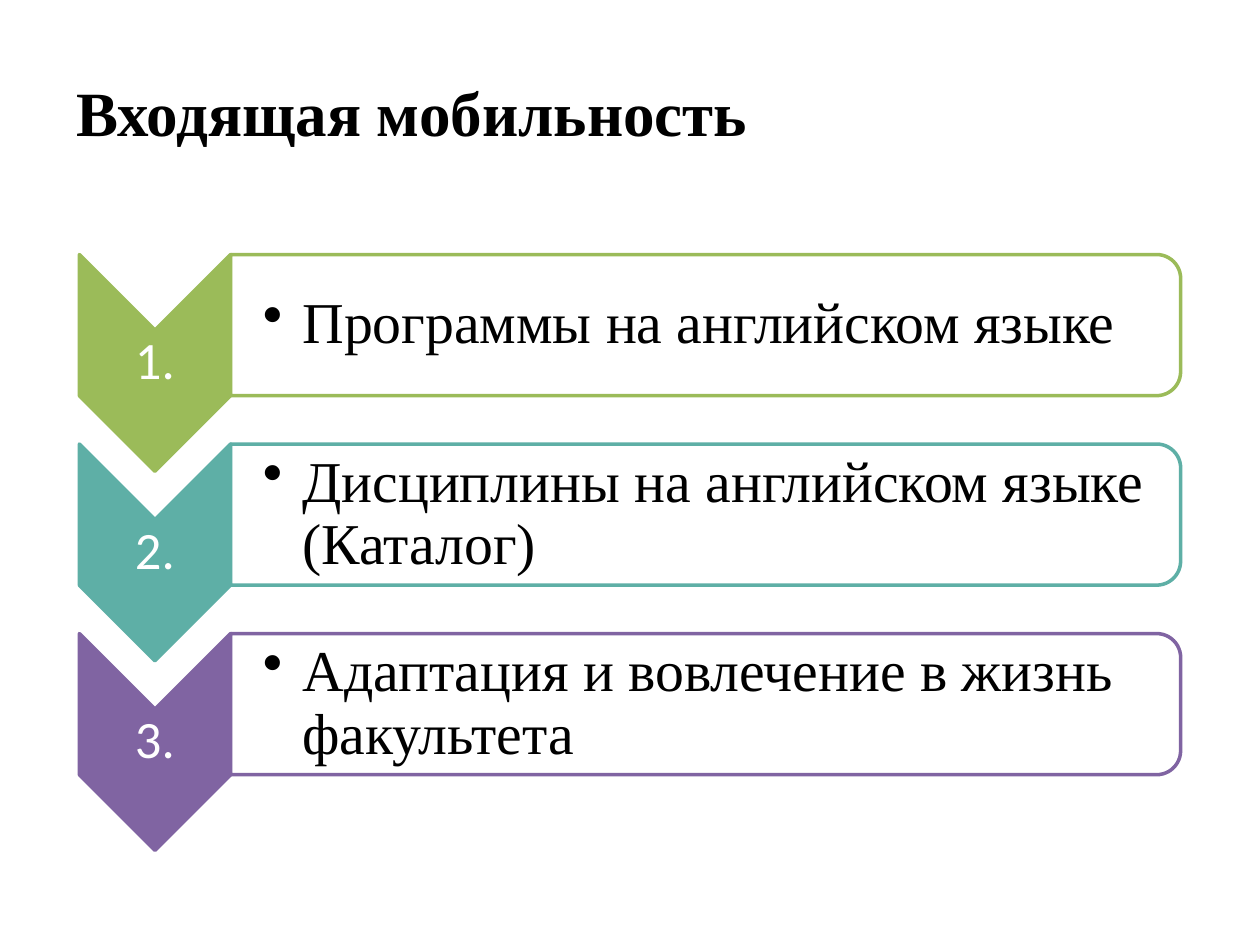
from dataclasses import dataclass

from lxml.etree import SubElement
from pptx import Presentation
from pptx.dml.color import RGBColor
from pptx.enum.shapes import MSO_SHAPE as Preset
from pptx.enum.text import MSO_ANCHOR as Anchor, PP_ALIGN as Align
from pptx.oxml.ns import qn
from pptx.util import Pt

SERIF = "Times New Roman"
SANS = "Calibri"
BLACK = "000000"
WHITE = "FFFFFF"

STEP_TOP = 145.44
STEP_PITCH = 108.3
CHEVRON_LEFT, CHEVRON_WIDTH, CHEVRON_HEIGHT = 45.36, 86.4, 123.84
PANEL_LEFT = CHEVRON_LEFT + CHEVRON_WIDTH
PANEL_WIDTH, PANEL_HEIGHT = 542.88, 80.64
TIP_DEPTH = CHEVRON_WIDTH / 2
CORNER_INSET = 3.94


@dataclass(frozen=True)
class Box:
    left: float
    top: float
    width: float
    height: float

    def lengths(self) -> tuple:
        return Pt(self.left), Pt(self.top), Pt(self.width), Pt(self.height)

    def before_quarter_turn(self) -> "Box":
        """Frame that covers this box once it is rotated by 90 degrees."""
        shift = (self.width - self.height) / 2
        return Box(self.left + shift, self.top - shift, self.height, self.width)


@dataclass(frozen=True)
class Step:
    number: str
    topic: str
    color: str


STEPS = [
    Step("1.", "Программы на английском языке", "9BBB59"),
    Step("2.", "Дисциплины на английском языке (Каталог)", "5EAFA6"),
    Step("3.", "Адаптация и вовлечение в жизнь факультета", "8064A2"),
]


def rgb(value: str) -> RGBColor:
    return RGBColor.from_string(value)


def add_bullet(paragraph, indent: float) -> None:
    properties = paragraph._p.get_or_add_pPr()
    properties.set("marL", str(Pt(indent)))
    properties.set("indent", str(-Pt(indent)))
    SubElement(properties, qn("a:buChar")).set("char", "•")


def add_text(slide, text: str, box: Box, *, size: float, font: str, color: str,
             bold: bool = False, align=Align.LEFT, spacing: float = 1.0,
             insets: tuple = (7.2, 3.6, 7.2, 3.6), bullet_indent: float = 0) -> None:
    frame = slide.shapes.add_textbox(*box.lengths()).text_frame
    frame.word_wrap = True
    frame.vertical_anchor = Anchor.MIDDLE
    (frame.margin_left, frame.margin_top,
     frame.margin_right, frame.margin_bottom) = map(Pt, insets)
    paragraph = frame.paragraphs[0]
    paragraph.alignment = align
    paragraph.line_spacing = spacing
    if bullet_indent:
        add_bullet(paragraph, bullet_indent)
    run = paragraph.add_run()
    run.text = text
    run.font.size = Pt(size)
    run.font.name = font
    run.font.bold = bold
    run.font.color.rgb = rgb(color)


def add_turned_shape(slide, preset, box: Box, fill: str, line: str,
                     adjustment: float, opacity: int = 100) -> None:
    """Draw a preset rotated by 90 degrees so that it fills the given box."""
    shape = slide.shapes.add_shape(preset, *box.before_quarter_turn().lengths())
    shape.rotation = 90
    shape.adjustments[0] = adjustment
    shape.shadow.inherit = False
    shape.fill.solid()
    shape.fill.fore_color.rgb = rgb(fill)
    shape.line.color.rgb = rgb(line)
    shape.line.width = Pt(2)
    if opacity < 100:
        fill_color = shape._element.spPr.find(f"{qn('a:solidFill')}/{qn('a:srgbClr')}")
        SubElement(fill_color, qn("a:alpha")).set("val", str(opacity * 1000))


def add_step(slide, step: Step, top: float) -> None:
    chevron = Box(CHEVRON_LEFT, top, CHEVRON_WIDTH, CHEVRON_HEIGHT)
    add_turned_shape(slide, Preset.CHEVRON, chevron, step.color, step.color, 0.5)
    number_box = Box(CHEVRON_LEFT, top + TIP_DEPTH, CHEVRON_WIDTH,
                     CHEVRON_HEIGHT - 2 * TIP_DEPTH)
    add_text(slide, step.number, number_box, size=30, font=SANS, color=WHITE,
             align=Align.CENTER, spacing=0.9, insets=(1.5,) * 4)

    panel = Box(PANEL_LEFT, top, PANEL_WIDTH, PANEL_HEIGHT)
    add_turned_shape(slide, Preset.ROUND_2_SAME_RECTANGLE, panel, WHITE,
                     step.color, 0.17, opacity=90)
    topic_box = Box(PANEL_LEFT, top + CORNER_INSET, PANEL_WIDTH - CORNER_INSET,
                    PANEL_HEIGHT - 2 * CORNER_INSET)
    add_text(slide, step.topic, topic_box, size=33, font=SERIF, color=BLACK,
             spacing=0.9, insets=(18.5, 1.5, 1.5, 1.5), bullet_indent=22.5)


def main() -> None:
    deck = Presentation()
    deck.slide_width, deck.slide_height = Pt(720), Pt(540)
    slide = deck.slides.add_slide(deck.slide_layouts[6])
    add_text(slide, "Входящая мобильность", Box(36.72, 15.12, 652.32, 96.48),
             size=36, font=SERIF, color=BLACK, bold=True)
    for index, step in enumerate(STEPS):
        add_step(slide, step, STEP_TOP + index * STEP_PITCH)
    deck.save("out.pptx")


if __name__ == "__main__":
    main()
